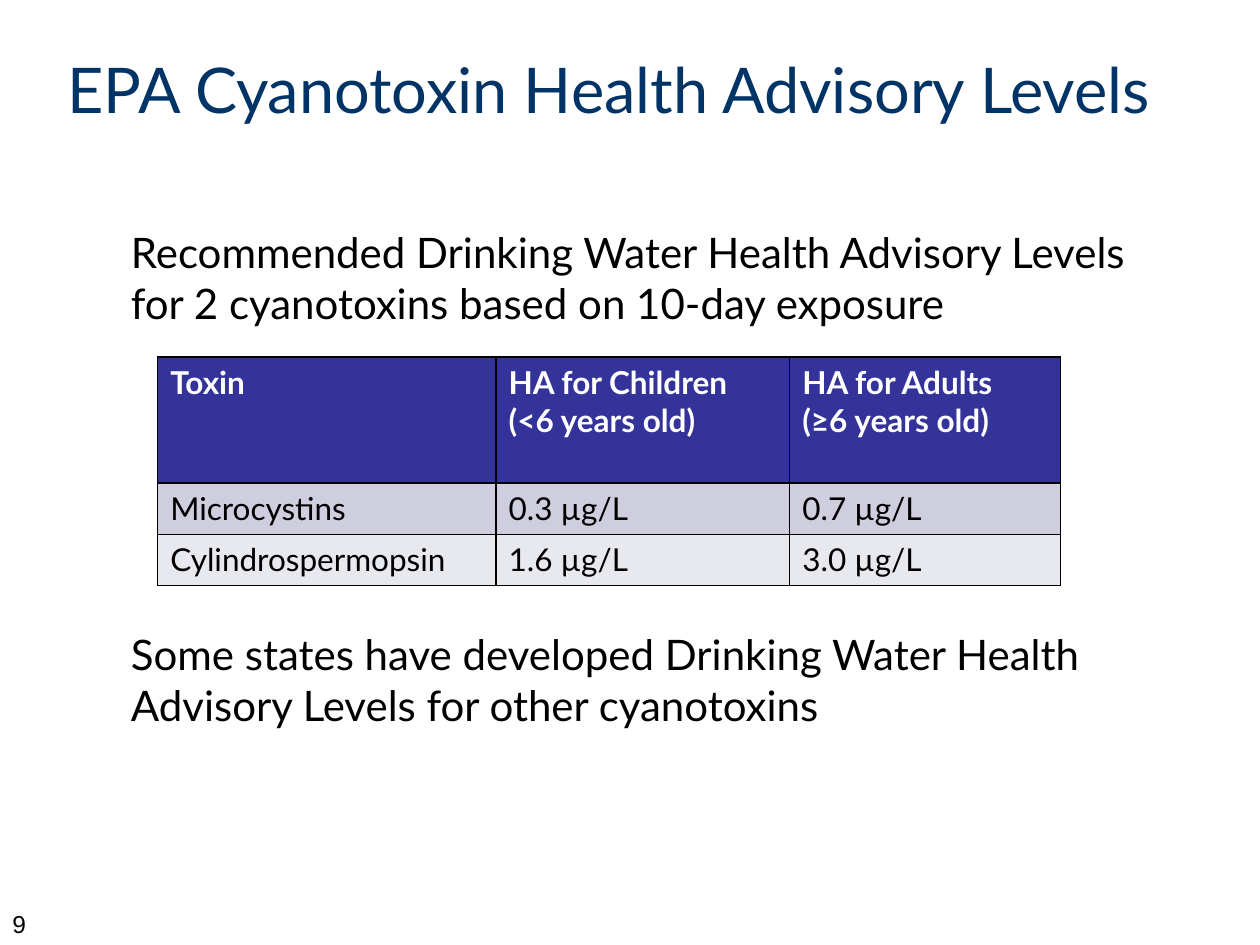
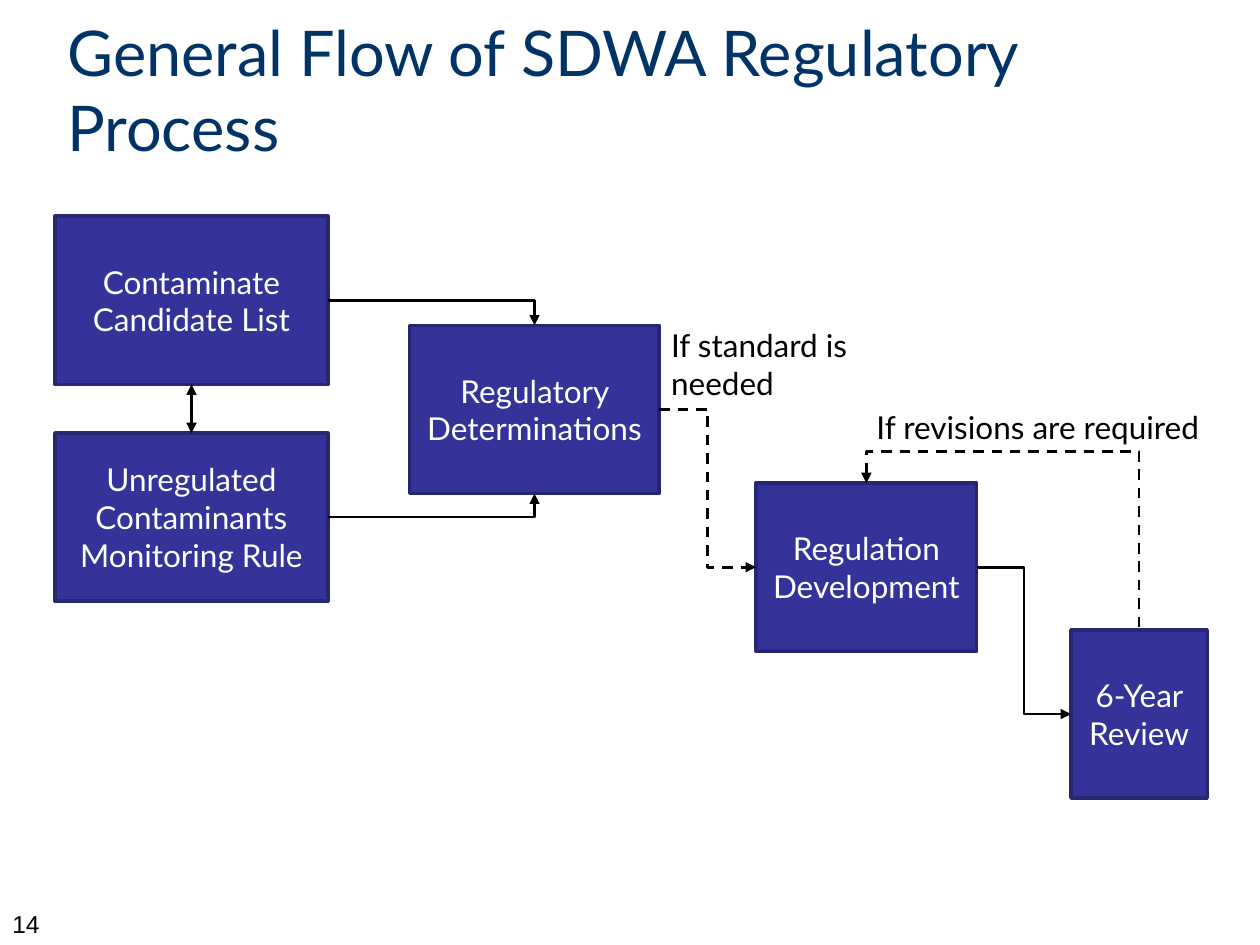
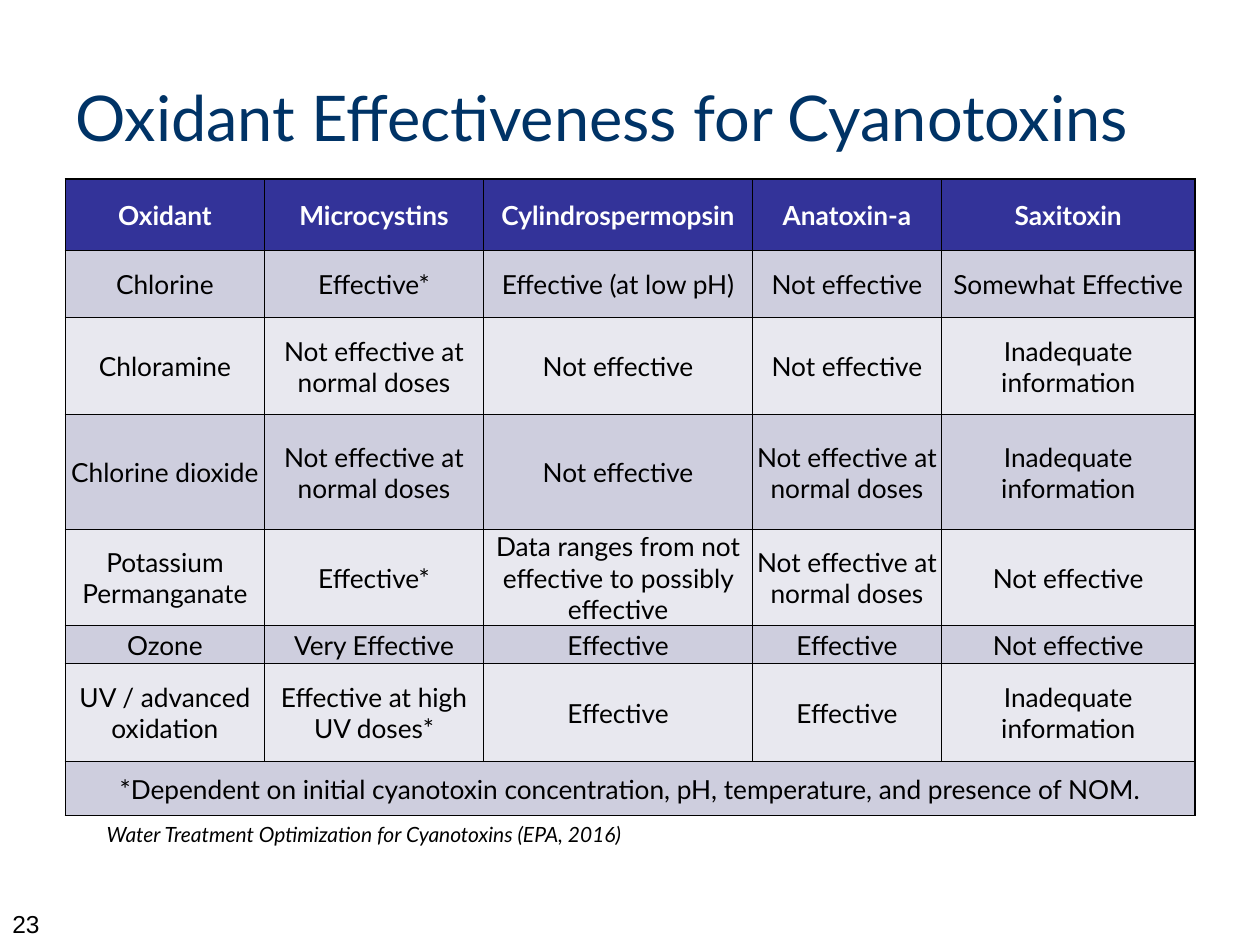
from dataclasses import dataclass

from lxml.etree import SubElement
from pptx import Presentation
from pptx.dml.color import RGBColor
from pptx.enum.dml import MSO_LINE
from pptx.enum.shapes import MSO_CONNECTOR, MSO_SHAPE
from pptx.enum.text import MSO_ANCHOR as Anchor, PP_ALIGN as Align
from pptx.oxml.ns import qn
from pptx.util import Cm, Pt


@dataclass(frozen=True)
class Theme:
    font: str = "Lato"
    number_font: str = "Arial"
    navy: str = "003366"
    indigo: str = "333399"
    edge: str = "262671"
    lilac: str = "CECEDE"
    mist: str = "E8E8EF"
    black: str = "000000"
    white: str = "FFFFFF"
    title: float = 36
    body: float = 24
    label: float = 18
    grid: float = 15
    number: float = 14
    caption: float = 12


THEME = Theme()
TOP, LEFT, BOTTOM, RIGHT = range(4)

ADVISORY_TITLE = "EPA Cyanotoxin Health Advisory Levels"
ADVISORY_POINTS = [
    "Recommended Drinking Water Health Advisory Levels for 2 cyanotoxins based on 10-day exposure",
    "Some states have developed Drinking Water Health Advisory Levels for other cyanotoxins",
]
ADVISORY_LEVELS = [
    ["Toxin", "HA for Children (<6 years old)", "HA for Adults\n(≥6 years old)"],
    ["Microcystins", "0.3 µg/L", "0.7 µg/L"],
    ["Cylindrospermopsin", "1.6 µg/L", "3.0 µg/L"],
]

PROCESS_TITLE = "General Flow of SDWA Regulatory Process"
STEP_HEIGHT = 3.39
STEPS = {
    "candidates": ("Contaminate Candidate List", 1.11, 4.36, 5.5),
    "monitoring": ("Unregulated Contaminants Monitoring Rule", 1.11, 8.73, 5.5),
    "determinations": ("Regulatory Determinations", 8.26, 6.56, 5.03),
    "development": ("Regulation Development", 15.24, 9.74, 4.45),
    "review": ("6-Year Review", 21.59, 12.7, 2.75),
}
CORNER_ROUTES = [
    ("candidates", RIGHT, "determinations", TOP),
    ("monitoring", RIGHT, "determinations", BOTTOM),
]
STEPPED_ROUTES = [
    ("determinations", RIGHT, "development", LEFT, True),
    ("development", RIGHT, "review", LEFT, False),
]
FEEDBACK_RISE = 0.64
CONDITIONS = [
    ("If standard is needed", (13.28, 6.48, 4.88, 1.7)),
    ("If revisions are required", (17.42, 7.75, 7.42, 1.7)),
]

OXIDANT_TITLE = "Oxidant Effectiveness for Cyanotoxins"
AT_DOSES = "Not effective at normal doses"
INADEQUATE = "Inadequate information"
OXIDANTS = [
    ["Oxidant", "Microcystins", "Cylindrospermopsin", "Anatoxin-a", "Saxitoxin"],
    ["Chlorine", "Effective*", "Effective (at low pH)", "Not effective", "Somewhat Effective"],
    ["Chloramine", AT_DOSES, "Not effective", "Not effective", INADEQUATE],
    ["Chlorine dioxide", AT_DOSES, "Not effective", AT_DOSES, INADEQUATE],
    ["Potassium Permanganate", "Effective*",
     "Data ranges from not effective to possibly effective", AT_DOSES, "Not effective"],
    ["Ozone", "Very Effective", "Effective", "Effective", "Not effective"],
    ["UV / advanced oxidation", "Effective at high UV doses*", "Effective", "Effective", INADEQUATE],
    ["*Dependent on initial cyanotoxin concentration, pH, temperature, and presence of NOM."],
]
OXIDANT_SOURCE = "Water Treatment Optimization for Cyanotoxins (EPA, 2016)"


def rgb(color):
    return RGBColor.from_string(color)


def write(frame, text, size, color=THEME.black, font=THEME.font, align=Align.LEFT,
          bold=False, italic=False):
    frame.text = text
    frame.word_wrap = True
    for paragraph in frame.paragraphs:
        paragraph.alignment = align
        for run in paragraph.runs:
            run.font.name = font
            run.font.size = Pt(size)
            run.font.bold = bold
            run.font.italic = italic
            run.font.color.rgb = rgb(color)


def add_text(slide, text, place, size, anchor=Anchor.TOP, **style):
    frame = slide.shapes.add_textbox(*map(Cm, place)).text_frame
    write(frame, text, size, **style)
    frame.vertical_anchor = anchor
    return frame


def add_page(deck, title, number, title_place=(1.11, 0.2, 22.86, 3.18)):
    slide = deck.slides.add_slide(deck.slide_layouts[6])
    add_text(slide, str(number), (0, 18.2, 5.93, 0.64), THEME.number, font=THEME.number_font)
    add_text(slide, title, title_place, THEME.title, Anchor.MIDDLE, color=THEME.navy)
    return slide


def add_borders(cell):
    properties = cell._tc.get_or_add_tcPr()
    for side in ("lnL", "lnR", "lnT", "lnB"):
        border = SubElement(properties, qn(f"a:{side}"), w=str(Pt(1)))
        SubElement(SubElement(border, qn("a:solidFill")), qn("a:srgbClr"), val=THEME.black)


def add_grid(slide, rows, corner, widths, heights, size,
             align=Align.LEFT, anchor=Anchor.TOP, margin=None):
    place = (*corner, sum(widths), sum(heights))
    table = slide.shapes.add_table(len(rows), len(widths), *map(Cm, place)).table
    for column, width in zip(table.columns, widths):
        column.width = Cm(width)
    for r, (row, height) in enumerate(zip(rows, heights)):
        table.rows[r].height = Cm(height)
        if len(row) < len(widths):
            table.cell(r, 0).merge(table.cell(r, len(widths) - 1))
        header = r == 0
        fill = THEME.indigo if header else (THEME.mist, THEME.lilac)[r % 2]
        for c in range(len(widths)):
            cell = table.cell(r, c)
            add_borders(cell)
            cell.fill.solid()
            cell.fill.fore_color.rgb = rgb(fill)
            cell.vertical_anchor = anchor
            if margin is not None:
                cell.margin_left = cell.margin_right = cell.margin_top = Cm(margin)
                cell.margin_bottom = 0
            if c < len(row):
                write(cell.text_frame, row[c], size, bold=header, align=align,
                      color=THEME.white if header else THEME.black)


def add_step(slide, text, left, top, width):
    step = slide.shapes.add_shape(MSO_SHAPE.RECTANGLE, *map(Cm, (left, top, width, STEP_HEIGHT)))
    step.shadow.inherit = False
    step.fill.solid()
    step.fill.fore_color.rgb = rgb(THEME.indigo)
    step.line.color.rgb = rgb(THEME.edge)
    step.line.width = Pt(2)
    write(step.text_frame, text, THEME.label, color=THEME.white, align=Align.CENTER)
    step.text_frame.vertical_anchor = Anchor.MIDDLE
    return step


def add_route(slide, start, start_side, end, end_side, kind=MSO_CONNECTOR.ELBOW,
              dashed=False, arrows=("tailEnd",)):
    route = slide.shapes.add_connector(kind, 0, 0, 0, 0)
    route.begin_connect(start, start_side)
    route.end_connect(end, end_side)
    route.line.color.rgb = rgb(THEME.black)
    route.line.width = Pt(1.5)
    if dashed:
        route.line.dash_style = MSO_LINE.DASH
    properties = route._element.spPr
    for arrow in arrows:
        SubElement(properties.find(qn("a:ln")), qn(f"a:{arrow}"), type="triangle")
    SubElement(properties, qn("a:effectLst"))
    return route


def add_feedback(slide, start, end):
    route = add_route(slide, start, TOP, end, TOP, dashed=True, arrows=("headEnd",))
    left, top, across, down = route.left, route.top, route.width, route.height
    route.left = left + (across - down) // 2
    route.top = top + (down - across) // 2
    route.width, route.height = down, across
    properties = route._element.spPr
    turn = properties.find(qn("a:xfrm"))
    turn.set("rot", str(270 * 60000))
    turn.set("flipH", "1")
    bend = round(-Cm(FEEDBACK_RISE) / down * 100000)
    guides = properties.find(qn("a:prstGeom")).find(qn("a:avLst"))
    SubElement(guides, qn("a:gd"), name="adj1", fmla=f"val {bend}")


def build_advisory(deck):
    slide = add_page(deck, ADVISORY_TITLE, 9)
    points = add_text(slide, "\n".join(ADVISORY_POINTS), (1.27, 4.45, 22.7, 13.34), THEME.body)
    points.margin_left = Cm(1.37)
    points.paragraphs[1].space_before = Pt(172)
    add_grid(slide, ADVISORY_LEVELS, (3.18, 7.2), (6.82, 5.92, 5.46), (2.54, 1.03, 1.03),
             THEME.label)


def build_process(deck):
    slide = add_page(deck, PROCESS_TITLE, 14)
    steps = {key: add_step(slide, *step) for key, step in STEPS.items()}
    for start, start_side, end, end_side in CORNER_ROUTES:
        route = add_route(slide, steps[start], start_side, steps[end], end_side)
        route._element.spPr.find(qn("a:prstGeom")).set("prst", "bentConnector2")
    for start, start_side, end, end_side, dashed in STEPPED_ROUTES:
        add_route(slide, steps[start], start_side, steps[end], end_side, dashed=dashed)
    add_feedback(slide, steps["development"], steps["review"])
    add_route(slide, steps["monitoring"], TOP, steps["candidates"], BOTTOM,
              MSO_CONNECTOR.STRAIGHT, arrows=("headEnd", "tailEnd"))
    for condition, place in CONDITIONS:
        add_text(slide, condition, place, THEME.label, Anchor.MIDDLE)


def build_oxidants(deck):
    slide = add_page(deck, OXIDANT_TITLE, 23, (1.27, 0.76, 22.86, 3.18))
    add_text(slide, OXIDANT_SOURCE, (1.9, 16.43, 17.35, 0.76), THEME.caption, italic=True)
    add_grid(slide, OXIDANTS, (1.32, 3.61), (4.01, 4.42, 5.42, 3.81, 5.11),
             (1.44, 1.35, 1.96, 2.31, 1.93, 0.77, 1.97, 1.09), THEME.grid,
             Align.CENTER, Anchor.MIDDLE, 0.03)


def main():
    deck = Presentation()
    deck.slide_width, deck.slide_height = Cm(25.4), Cm(19.05)
    build_advisory(deck)
    build_process(deck)
    build_oxidants(deck)
    deck.save("out.pptx")


if __name__ == "__main__":
    main()
